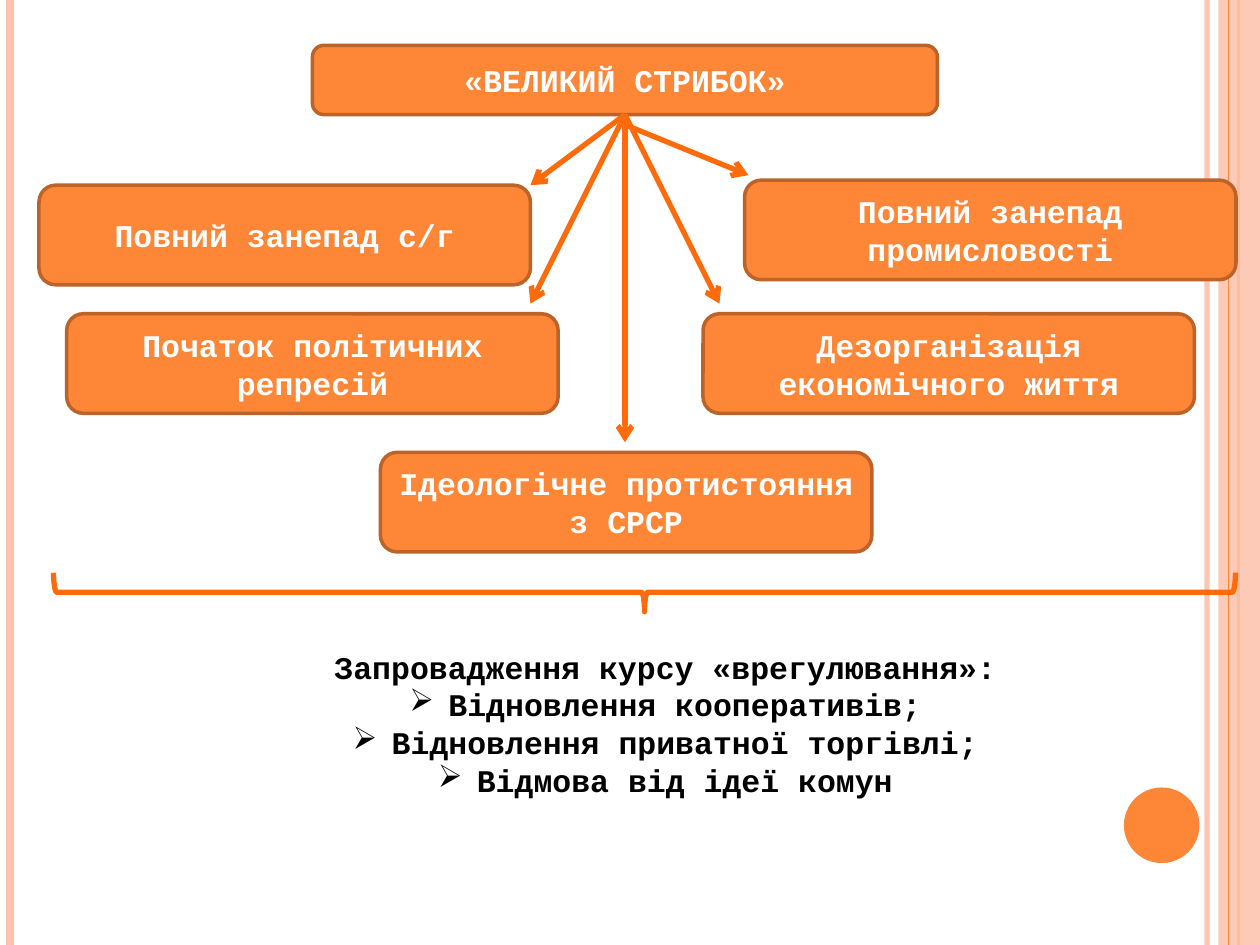
"""Build the slide on the outcomes of the Great Leap Forward."""
from lxml import etree
from pptx import Presentation
from pptx.dml.color import RGBColor
from pptx.enum.shapes import MSO_CONNECTOR, MSO_SHAPE
from pptx.enum.text import MSO_ANCHOR, PP_ALIGN
from pptx.oxml.ns import qn
from pptx.util import Inches, Pt

STRAIGHT = MSO_CONNECTOR.STRAIGHT
RECTANGLE, ROUNDED = MSO_SHAPE.RECTANGLE, MSO_SHAPE.ROUNDED_RECTANGLE
ELLIPSE, BRACE = MSO_SHAPE.OVAL, MSO_SHAPE.LEFT_BRACE
CENTER, MIDDLE = PP_ALIGN.CENTER, MSO_ANCHOR.MIDDLE
COLORS = {
    "orange": "FE8637", "border": "BC6329", "arrow": "FF6B0A",
    "pink": "FEC3AE", "white": "FFFFFF", "black": "000000",
}
RGB = {name: RGBColor.from_string(value) for name, value in COLORS.items()}

presentation = Presentation()
presentation.slide_width, presentation.slide_height = Inches(10), Inches(7.5)
COLUMN = presentation.slide_width / 100
ROW = presentation.slide_height / 75
slide = presentation.slides.add_slide(presentation.slide_layouts[6])


def add_line(start, end, color, width):
    connector = slide.shapes.add_connector(
        STRAIGHT, int(start[0] * COLUMN), int(start[1] * ROW),
        int(end[0] * COLUMN), int(end[1] * ROW))
    connector.line.color.rgb = RGB[color]
    connector.line.width = Pt(width)
    properties = connector._element.spPr
    etree.SubElement(properties, qn("a:effectLst"))
    return properties.find(qn("a:ln"))


def add_block(kind, left, top, width, height, fill=None, border=None, weight=2):
    shape = slide.shapes.add_shape(
        kind, int(left * COLUMN), int(top * ROW), int(width * COLUMN), int(height * ROW))
    shape.shadow.inherit = False
    if fill:
        shape.fill.solid()
        shape.fill.fore_color.rgb = RGB[fill]
    else:
        shape.fill.background()
    if border:
        shape.line.color.rgb = RGB[border]
        shape.line.width = Pt(weight)
    else:
        shape.line.fill.background()
    return shape


edge_line = add_line((95.8, 0), (95.8, 75), "pink", 3)
add_line((0.8, 0), (0.8, 75), "pink", 4.5)
add_line((98.3, 0), (98.3, 75), "orange", 1.5)
side_band = add_block(RECTANGLE, 96.7, 0, 3.3, 75, "pink")
add_line((97.5, 0), (97.5, 75), "orange", 0.75)
add_block(ELLIPSE, 89.2, 62.5, 6, 6, "orange")
for element, opacity in ((edge_line, 93), (side_band._element.spPr, 87)):
    color = element.find(qn("a:solidFill")).find(qn("a:srgbClr"))
    etree.SubElement(color, qn("a:alpha"), val=str(opacity * 1000))

BOX_WIDTH, BOX_HEIGHT = 39, 7.9
boxes = [
    ("«ВЕЛИКИЙ СТРИБОК»", 24.8, 3.6, 49.6, 5.5),
    ("Повний занепад с/г", 3.1, 14.7, BOX_WIDTH, BOX_HEIGHT),
    ("Повний занепад промисловості", 59.1, 14.3, BOX_WIDTH, BOX_HEIGHT),
    ("Початок політичних репресій", 5.3, 24.9, BOX_WIDTH, BOX_HEIGHT),
    ("Дезорганізація економічного життя", 55.8, 24.9, BOX_WIDTH, BOX_HEIGHT),
    ("Ідеологічне протистояння з СРСР", 30.2, 35.9, BOX_WIDTH, BOX_HEIGHT),
]
for text, *place in boxes:
    box = add_block(ROUNDED, *place, "orange", "border")
    frame = box.text_frame
    frame.word_wrap = True
    frame.vertical_anchor = MIDDLE
    paragraph = frame.paragraphs[0]
    paragraph.text = text
    paragraph.alignment = CENTER
    font = paragraph.font
    font.name, font.size, font.bold = "Courier New", Pt(18), True
    font.color.rgb = RGB["white"]

HUB = 49.6
arrows = [(9.1, 42.1, 14.7), (9.9, 59.4, 13.9), (9.1, 42.1, 24.1),
          (9.1, 57.1, 24.1), (9.1, HUB, 35.1)]
for start_row, end_column, end_row in arrows:
    line = add_line((HUB, start_row), (end_column, end_row), "arrow", 3)
    etree.SubElement(line, qn("a:tailEnd"), type="arrow")

brace = add_block(BRACE, 49.6, 0.1, 3.1, 93.8, border="arrow", weight=3)
brace.rotation = 270

course = slide.shapes.add_textbox(
    int(7.5 * COLUMN), int(50.9 * ROW), int(90.6 * COLUMN), int(13.1 * ROW))
frame = course.text_frame
frame.word_wrap = True
lines = ["Запровадження курсу «врегулювання»:", "Відновлення кооперативів;",
         "Відновлення приватної торгівлі;", "Відмова від ідеї комун"]
for index, text in enumerate(lines):
    paragraph = frame.add_paragraph() if index else frame.paragraphs[0]
    paragraph.text = text
    paragraph.alignment = CENTER
    if index:
        properties = paragraph._p.get_or_add_pPr()
        indent = Inches(0.31)
        properties.set("marL", str(indent))
        properties.set("indent", str(-indent))
        etree.SubElement(properties, qn("a:buChar"), char="➢")
    font = paragraph.font
    font.name, font.size, font.bold = "Courier New", Pt(18), True
    font.color.rgb = RGB["black"]

presentation.save("out.pptx")
